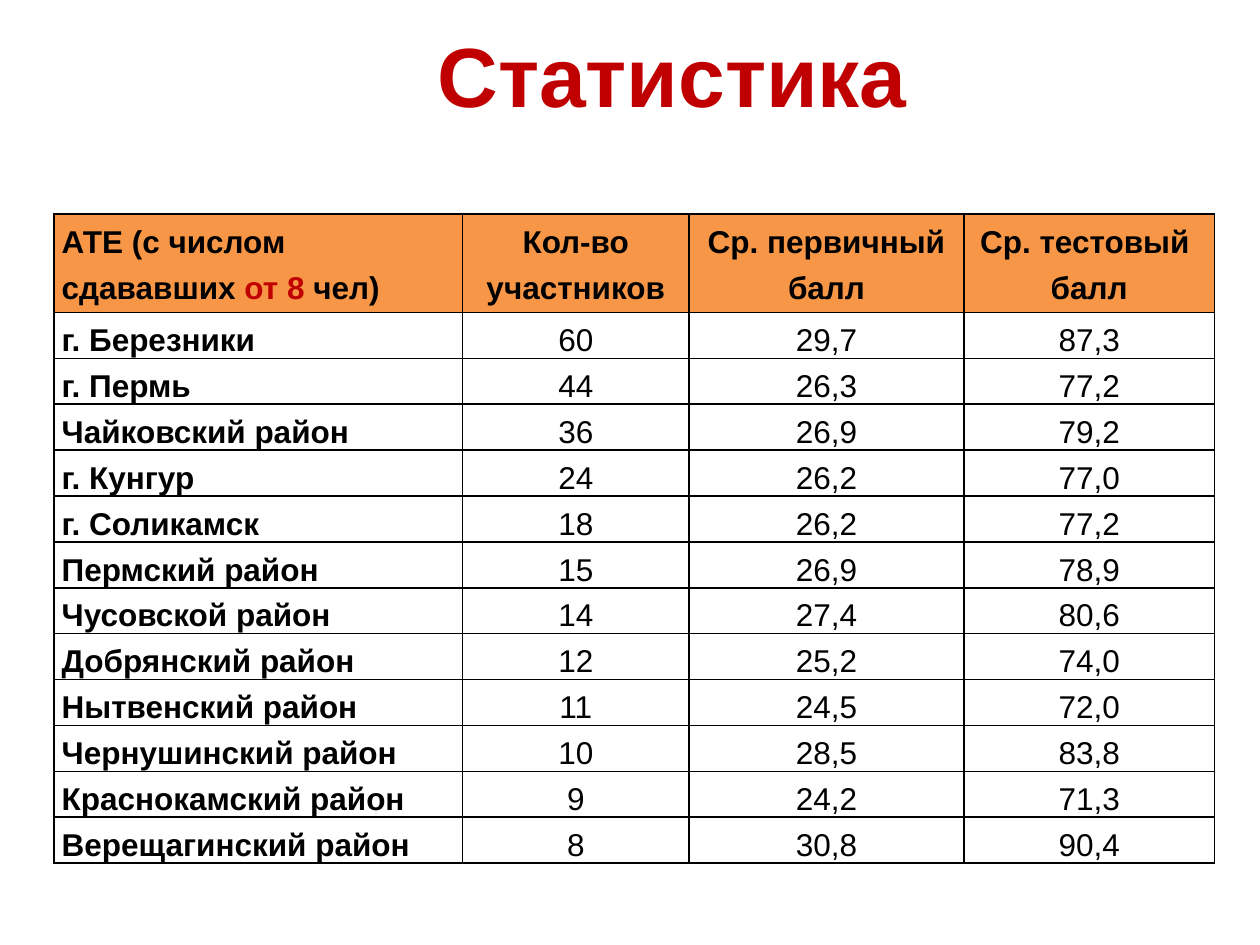
"""Build a slide with a table of exam statistics by district."""
from dataclasses import dataclass

from lxml.etree import SubElement
from pptx import Presentation
from pptx.dml.color import RGBColor as Color
from pptx.enum.text import MSO_ANCHOR as Anchor, MSO_AUTO_SIZE as AutoSize, PP_ALIGN as Align
from pptx.oxml.ns import qn
from pptx.util import Inches, Pt


@dataclass(frozen=True)
class Theme:
    font: str = "Arial"
    ink: str = "000000"
    accent: str = "C00000"
    header: str = "F79646"
    paper: str = "FFFFFF"
    title_size: int = 48
    body_size: int = 18
    border: int = 1
    line_spacing: float = 1.3


@dataclass(frozen=True)
class Span:
    text: str
    color: str
    bold: bool = True


@dataclass(frozen=True)
class District:
    name: str
    participants: str
    primary_score: str
    test_score: str

    def spans(self) -> list[list[Span]]:
        values = (self.participants, self.primary_score, self.test_score)
        return [[Span(self.name, THEME.ink)]] + [[Span(value, THEME.ink, False)] for value in values]


THEME = Theme()
WIDTH, HEIGHT = Inches(10), Inches(7.5)
COLUMN_SHARES = (0.324, 0.18, 0.218, 0.199)
HEADER_ROW, BODY_ROW = Inches(0.78), Inches(0.26)
HEADER = [
    [Span("АТЕ (с числом сдававших ", THEME.ink), Span("от 8 ", THEME.accent), Span("чел)", THEME.ink)],
    [Span("Кол-во участников", THEME.ink)],
    [Span("Ср. первичный балл", THEME.ink)],
    [Span("Ср. тестовый  балл", THEME.ink)],
]
DISTRICTS = [
    District("г. Березники", "60", "29,7", "87,3"),
    District("г. Пермь", "44", "26,3", "77,2"),
    District("Чайковский район", "36", "26,9", "79,2"),
    District("г. Кунгур", "24", "26,2", "77,0"),
    District("г. Соликамск", "18", "26,2", "77,2"),
    District("Пермский район", "15", "26,9", "78,9"),
    District("Чусовской район", "14", "27,4", "80,6"),
    District("Добрянский район", "12", "25,2", "74,0"),
    District("Нытвенский район", "11", "24,5", "72,0"),
    District("Чернушинский район", "10", "28,5", "83,8"),
    District("Краснокамский район", "9", "24,2", "71,3"),
    District("Верещагинский район", "8", "30,8", "90,4"),
]


def apply(target, values: dict) -> None:
    for name, value in values.items():
        setattr(target, name, value)


def write(para, spans: list[Span], size: int, align: Align) -> None:
    para.alignment = align
    for span in spans:
        run = para.add_run()
        run.text = span.text
        apply(run.font, {"name": THEME.font, "size": Pt(size), "bold": span.bold})
        run.font.color.rgb = Color.from_string(span.color)


def draw_borders(cell) -> None:
    properties = cell._tc.get_or_add_tcPr()
    for index, side in enumerate(("lnL", "lnR", "lnT", "lnB")):
        line = SubElement(properties, qn(f"a:{side}"), w=str(Pt(THEME.border)))
        fill = SubElement(line, qn("a:solidFill"))
        SubElement(fill, qn("a:srgbClr"), val=THEME.ink)
        properties.insert(index, line)


def draw_cell(cell, spans: list[Span], is_header: bool, align: Align) -> None:
    apply(cell, {
        "margin_left": Inches(0.06), "margin_right": Inches(0.06),
        "margin_top": 0, "margin_bottom": 0,
        "vertical_anchor": Anchor.TOP if is_header else Anchor.BOTTOM,
    })
    cell.fill.solid()
    cell.fill.fore_color.rgb = Color.from_string(THEME.header if is_header else THEME.paper)
    para = cell.text_frame.paragraphs[0]
    para.line_spacing = THEME.line_spacing
    write(para, spans, THEME.body_size, align)
    draw_borders(cell)


def draw_table(page) -> None:
    rows = [HEADER] + [district.spans() for district in DISTRICTS]
    frame = page.shapes.add_table(
        len(rows), len(COLUMN_SHARES), Inches(0.43), Inches(1.7),
        int(WIDTH * sum(COLUMN_SHARES)), HEADER_ROW + BODY_ROW * len(DISTRICTS))
    table = frame.table
    apply(table, {"first_row": False, "horz_banding": False})
    for column, share in zip(table.columns, COLUMN_SHARES):
        column.width = int(WIDTH * share)
    for row_index, row in enumerate(rows):
        table.rows[row_index].height = BODY_ROW if row_index else HEADER_ROW
        for column_index, spans in enumerate(row):
            align = Align.CENTER if column_index else Align.LEFT
            draw_cell(table.cell(row_index, column_index), spans, row_index == 0, align)


def draw_title(page, text: str) -> None:
    box = page.shapes.add_textbox(Inches(3.35), Inches(0.14), Inches(3.97), Inches(0.91))
    apply(box.text_frame, {"word_wrap": False, "auto_size": AutoSize.SHAPE_TO_FIT_TEXT})
    write(box.text_frame.paragraphs[0], [Span(text, THEME.accent)], THEME.title_size, Align.CENTER)


def main() -> None:
    deck = Presentation()
    apply(deck, {"slide_width": WIDTH, "slide_height": HEIGHT})
    page = deck.slides.add_slide(deck.slide_layouts[6])
    draw_table(page)
    draw_title(page, "Статистика")
    deck.save("out.pptx")


if __name__ == "__main__":
    main()
